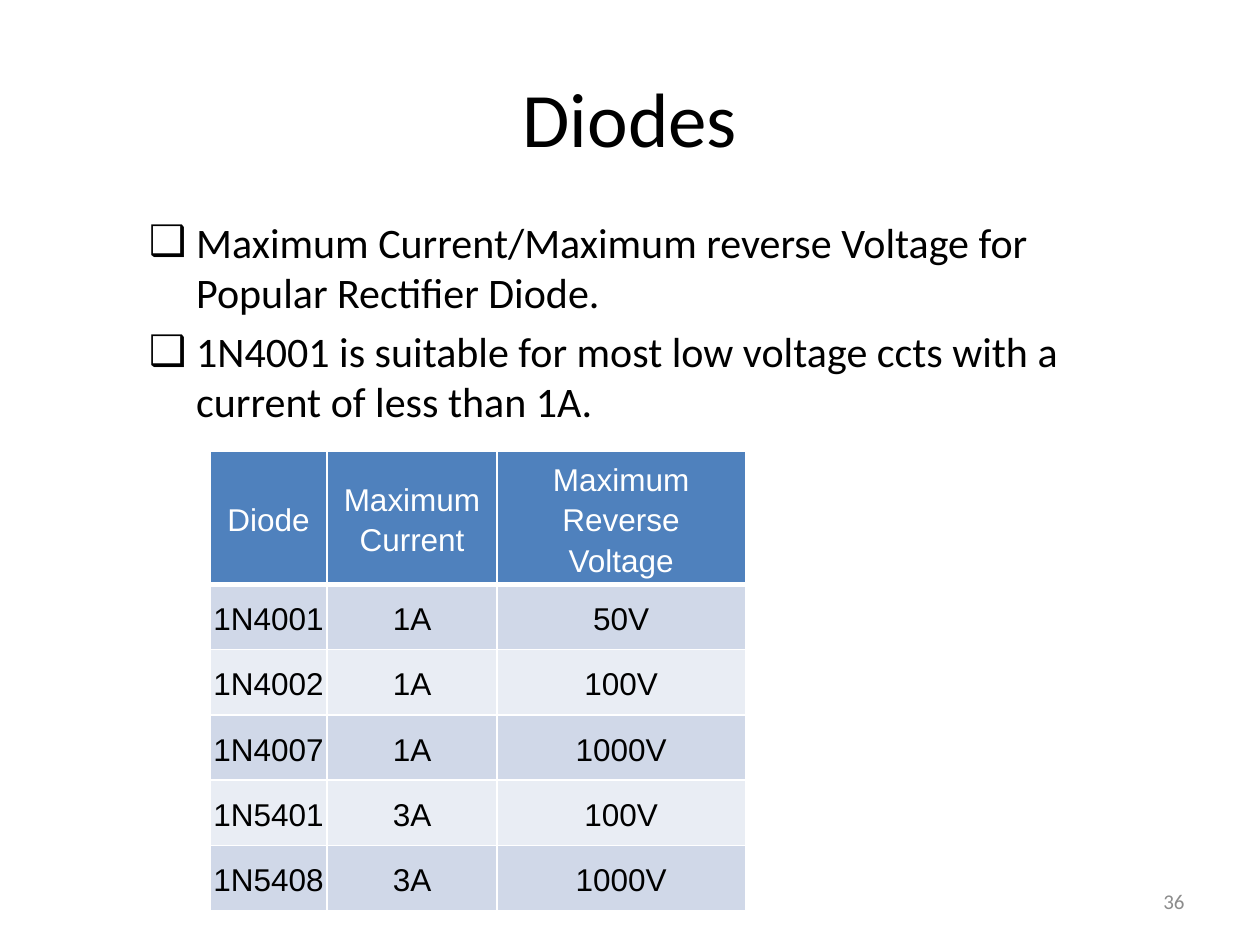
"""Build the slide on current and voltage ratings of rectifier diodes."""
from lxml import etree
from pptx import Presentation
from pptx.dml import color
from pptx.enum import text
from pptx.oxml import ns
from pptx.util import Pt

COLORS = {"ink": "000000", "white": "FFFFFF", "header": "4F81BD",
          "odd": "D0D8E8", "even": "E9EDF4", "number": "8C8C8C"}
BULLETS = ["Maximum Current/Maximum reverse Voltage for Popular Rectifier Diode.",
           "1N4001 is suitable for most low voltage ccts with a current of less than 1A."]
RATINGS = [("Diode", "Maximum\nCurrent", "Maximum\nReverse\nVoltage"),
           ("1N4001", "1A", "50V"),
           ("1N4002", "1A", "100V"),
           ("1N4007", "1A", "1000V"),
           ("1N5401", "3A", "100V"),
           ("1N5408", "3A", "1000V")]
COL_WIDTHS = (67, 97, 142)
HEADER_HEIGHT, ROW_HEIGHT = 76, 37.3


def rgb(name):
    """Return the named colour."""
    return color.RGBColor.from_string(COLORS[name])


def add_run(p, words, size, ink, font="Calibri"):
    """Add one formatted run to a paragraph."""
    r = p.add_run()
    r.text = words
    r.font.size, r.font.name = Pt(size), font
    r.font.color.rgb = rgb(ink)


def add_box(slide, left, top, width, height, anchor):
    """Add a wrapping text box and return its text frame."""
    sp = slide.shapes.add_textbox(Pt(left), Pt(top), Pt(width), Pt(height))
    tf = sp.text_frame
    tf.word_wrap, tf.vertical_anchor = True, anchor
    return tf


def add_line(slide, box, words, size, ink, align):
    """Add a text box holding one vertically centred line."""
    p = add_box(slide, *box, text.MSO_ANCHOR.MIDDLE).paragraphs[0]
    p.alignment = align
    add_run(p, words, size, ink)


def add_bullets(slide, box, items):
    """Add a box of paragraphs with square bullets."""
    tf = add_box(slide, *box, text.MSO_ANCHOR.TOP)
    for i, item in enumerate(items):
        p = tf.add_paragraph() if i else tf.paragraphs[0]
        pPr = p._p.get_or_add_pPr()
        pPr.set("marL", str(Pt(27)))
        pPr.set("indent", str(-Pt(27)))
        etree.SubElement(pPr, ns.qn("a:buFont"), typeface="Arial")
        etree.SubElement(pPr, ns.qn("a:buChar"), char="❑")
        if i:
            p.space_before = Pt(4.8)
        add_run(p, item, 24, "ink")


def set_borders(cell, bottom):
    """Draw white borders round a cell."""
    tcPr = cell._tc.get_or_add_tcPr()
    for i, (side, width) in enumerate(zip("LRTB", (1, 1, 1, bottom))):
        ln = etree.Element(ns.qn(f"a:ln{side}"), w=str(Pt(width)))
        fill = etree.SubElement(ln, ns.qn("a:solidFill"))
        etree.SubElement(fill, ns.qn("a:srgbClr"), val=COLORS["white"])
        tcPr.insert(i, ln)


def fill_cell(cell, words, fill, ink, bottom):
    """Style a table cell and write its centred lines."""
    cell.margin_left = cell.margin_right = Pt(0.75)
    cell.margin_top = cell.margin_bottom = Pt(0.75)
    cell.vertical_anchor = text.MSO_ANCHOR.MIDDLE
    cell.fill.solid()
    cell.fill.fore_color.rgb = rgb(fill)
    set_borders(cell, bottom)
    p = cell.text_frame.paragraphs[0]
    p.alignment = text.PP_ALIGN.CENTER
    p.line_spacing, p.space_after = 1.15, Pt(10)
    for i, line in enumerate(words.split("\n")):
        if i:
            p.add_line_break()
        add_run(p, line, 18, ink, "Arial")


def add_ratings(slide, left, top):
    """Add the table of diode ratings."""
    height = HEADER_HEIGHT + ROW_HEIGHT * (len(RATINGS) - 1)
    table = slide.shapes.add_table(len(RATINGS), len(COL_WIDTHS), Pt(left), Pt(top),
                                   Pt(sum(COL_WIDTHS)), Pt(height)).table
    for col, width in zip(table.columns, COL_WIDTHS):
        col.width = Pt(width)
    for r, values in enumerate(RATINGS):
        table.rows[r].height = Pt(ROW_HEIGHT if r else HEADER_HEIGHT)
        fill = ("even", "odd")[r % 2] if r else "header"
        for c, value in enumerate(values):
            fill_cell(table.cell(r, c), value, fill,
                      "ink" if r else "white", 1 if r else 3)


def main():
    """Build and save the slide."""
    prs = Presentation()
    prs.slide_width, prs.slide_height = Pt(720), Pt(540)
    slide = prs.slides.add_slide(prs.slide_layouts[6])
    add_line(slide, (36, 21.6, 648, 90), "Diodes", 44, "ink", text.PP_ALIGN.CENTER)
    add_bullets(slide, (78, 120, 552, 390), BULLETS)
    add_ratings(slide, 120, 258)
    add_line(slide, (516, 500.5, 168, 28.75), "36", 12, "number", text.PP_ALIGN.RIGHT)
    prs.save("out.pptx")


if __name__ == "__main__":
    main()
